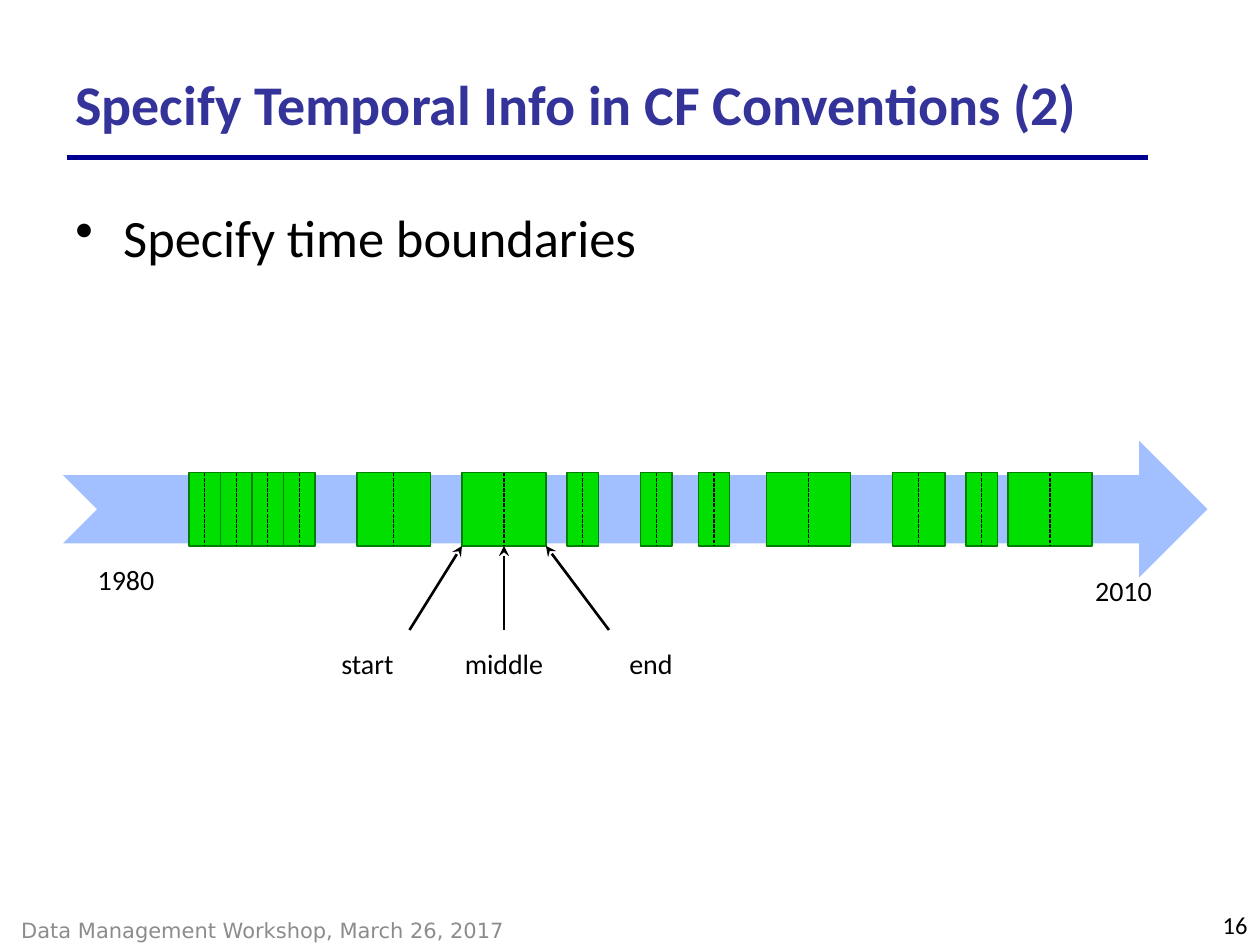
from lxml import etree
from pptx import Presentation, util as u
from pptx.dml.color import RGBColor
from pptx.enum import dml, shapes, text
from pptx.oxml.ns import qn

BLACK = RGBColor(0, 0, 0)
NAVY = RGBColor(0x00, 0x00, 0x90)
INDIGO = RGBColor(0x33, 0x33, 0x99)
GREY = RGBColor(0x8C, 0x8C, 0x8C)
SKY = RGBColor(0xA2, 0xC0, 0xFF)
GREEN = RGBColor(0x00, 0xDF, 0x00)
DARK_GREEN = RGBColor(0x00, 0x80, 0x00)

LEFT, CENTER, RIGHT = text.PP_ALIGN.LEFT, text.PP_ALIGN.CENTER, text.PP_ALIGN.RIGHT
TOP, MIDDLE = text.MSO_ANCHOR.TOP, text.MSO_ANCHOR.MIDDLE

TITLE = "Specify Temporal Info in CF Conventions (2)"
BULLET = "Specify time boundaries"
FOOTER = "Data Management Workshop, March 26, 2017"
PAGE = "16"

COLS_PER_INCH = 24
BAND_TOP, BAND_HEIGHT, POINTER_ROW = 90, 14, 120
PERIODS = [(36, 6), (42, 6), (48, 6), (54, 6), (68, 14), (88, 16), (108, 6),
           (122, 6), (133, 6), (146, 16), (170, 10), (184, 6), (192, 16)]
MARKED = (88, 16)
POINTERS = [(78, 88), (96, 96), (116, 104)]
LABELS = [("1980", 12, 106), ("2010", 202, 108),
          ("start", 58, 122), ("middle", 84, 122), ("end", 112, 122)]


def grid(n):
    return u.Inches(n / COLS_PER_INCH)


def add_text(s, words, box, size, color=BLACK, name="Calibri", bold=False,
             align=LEFT, anchor=TOP, bullet=None):
    tf = s.shapes.add_textbox(*box).text_frame
    tf.word_wrap, tf.vertical_anchor = True, anchor
    p = tf.paragraphs[0]
    p.alignment = align
    if bullet:
        pPr = p._p.get_or_add_pPr()
        pPr.set("marL", str(u.Inches(0.38)))
        pPr.set("indent", str(-u.Inches(0.38)))
        etree.SubElement(pPr, qn("a:buChar")).set("char", bullet)
    r = p.add_run()
    r.text = words
    for key, value in dict(size=u.Pt(size), name=name, bold=bold).items():
        setattr(r.font, key, value)
    r.font.color.rgb = color


def add_line(s, x1, y1, x2, y2, color=BLACK, width=0.75, dash=None, head=None):
    c = s.shapes.add_connector(shapes.MSO_CONNECTOR.STRAIGHT, x1, y1, x2, y2)
    c.line.color.rgb, c.line.width = color, u.Pt(width)
    if dash:
        c.line.dash_style = dash
    if head:
        etree.SubElement(c.line._get_or_add_ln(), qn("a:tailEnd")).set("type", head)
    etree.SubElement(c._element.spPr, qn("a:effectLst"))
    return c


def add_block(s, kind, box, fill, outline=None):
    sp = s.shapes.add_shape(kind, *box)
    sp.shadow.inherit = False
    sp.fill.solid()
    sp.fill.fore_color.rgb = fill
    if outline:
        sp.line.color.rgb, sp.line.width = outline, u.Pt(0.75)
    else:
        sp.line.fill.background()
    return sp


def inches(*values):
    return [u.Inches(v) for v in values]


def add_timeline(s):
    add_block(s, shapes.MSO_SHAPE.NOTCHED_RIGHT_ARROW,
              [grid(n) for n in (12, 84, 218, 26)], SKY)
    top, bottom = grid(BAND_TOP), grid(BAND_TOP + BAND_HEIGHT)
    blocks = {}
    for start, width in PERIODS:
        box = [grid(n) for n in (start, BAND_TOP, width, BAND_HEIGHT)]
        sp = add_block(s, shapes.MSO_SHAPE.RECTANGLE, box, GREEN, DARK_GREEN)
        mid = grid(start + width / 2)
        c = add_line(s, mid, top, mid, bottom, dash=dml.MSO_LINE.SQUARE_DOT)
        c.begin_connect(sp, 0)
        c.end_connect(sp, 2)
        blocks[start, width] = sp
    for tail, tip in POINTERS:
        c = add_line(s, grid(tail), grid(POINTER_ROW), grid(tip), bottom,
                     width=1.5, head="stealth")
        if tip == MARKED[0] + MARKED[1] / 2:
            c.end_connect(blocks[MARKED], 2)
    for words, col, row in LABELS:
        add_text(s, words, [grid(col), grid(row), *inches(1, 0.37)], 16, align=CENTER)


def main():
    prs = Presentation()
    prs.slide_width, prs.slide_height = inches(10, 7.5)
    s = prs.slides.add_slide(prs.slide_layouts[6])
    add_line(s, *inches(0.53, 1.25, 9.11, 1.25), color=NAVY, width=2.75)
    add_text(s, FOOTER, inches(0.07, 7.18, 5.68, 0.4), 12, GREY, "DejaVu Sans",
             anchor=MIDDLE)
    add_text(s, TITLE, inches(0.5, 0.3, 8.5, 1.03), 32, INDIGO, bold=True,
             anchor=MIDDLE)
    add_text(s, BULLET, inches(0.5, 1.58, 8.5, 5.08), 30, bullet="•")
    add_text(s, PAGE, inches(7.67, 7.17, 2.33, 0.33), 14, align=RIGHT)
    add_timeline(s)
    prs.save("out.pptx")


if __name__ == "__main__":
    main()
